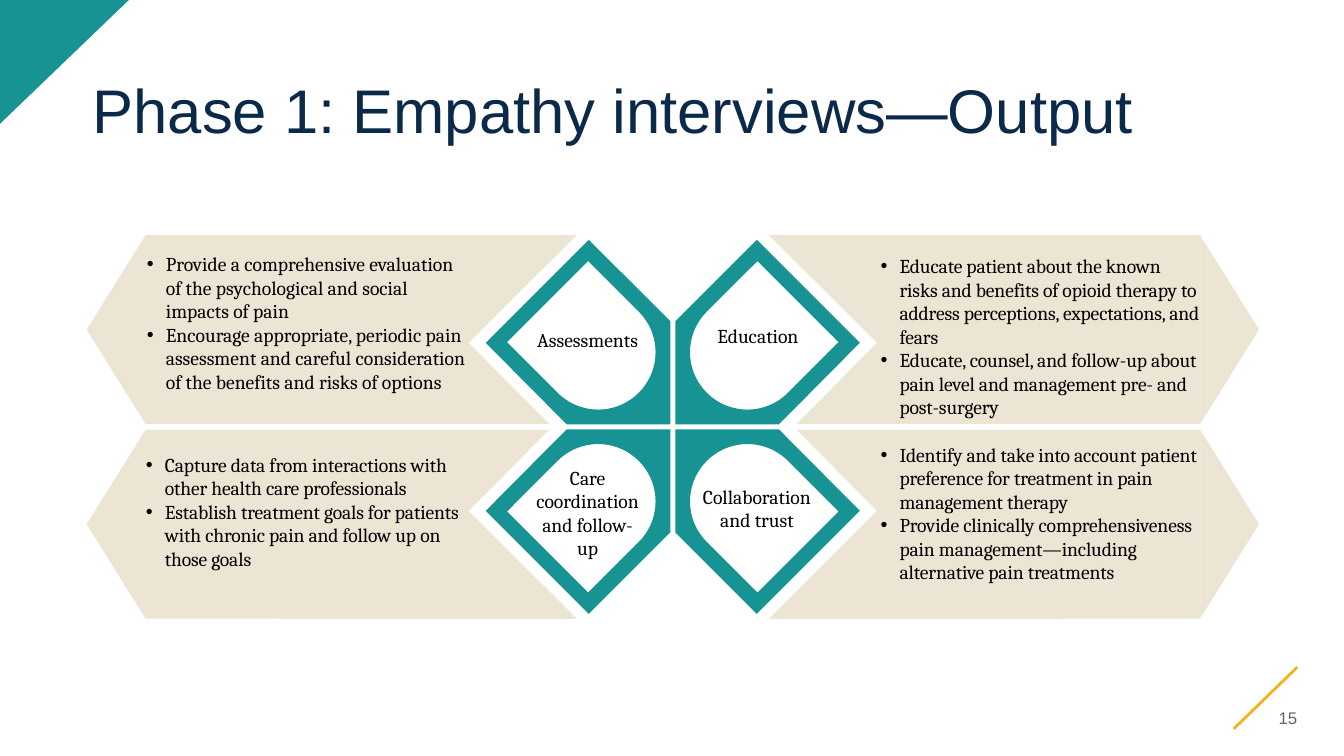
from math import cos, radians, sin

from lxml.etree import SubElement
from pptx import Presentation
from pptx.dml.color import RGBColor
from pptx.enum.shapes import MSO_CONNECTOR, MSO_SHAPE
from pptx.enum.text import MSO_ANCHOR, MSO_AUTO_SIZE, PP_ALIGN
from pptx.oxml.ns import qn
from pptx.util import Pt

COLORS = {
    "teal": "189393",
    "sand": "ECE5D3",
    "gold": "F1B51C",
    "navy": "0B2949",
    "slate": "5B6771",
    "black": "000000",
}
HUB_X, HUB_Y = 480.6, 304.9
BANNER = [(68.4, 137.2), (145.8, 60.1), (88.6, 2.2), (377, 2.2), (377, 137)]
PETAL = [(1.8, 1.8), (75.8, 1.8), (133.6, 60), (60, 133.6), (1.8, 75.4)]
HOLE_CENTER, HOLE_RADIUS = 53.3, 41
HOLE_CORNERS = [(118.4, 60.5), (60.5, 118.4)]

QUADRANTS = [
    {
        "side": (-1, -1),
        "label": ("Assessments", (373, 230.4, 93.6, 24.5), PP_ALIGN.CENTER, False),
        "findings": [
            "Provide a comprehensive evaluation of the psychological and social impacts of pain",
            "Encourage appropriate, periodic pain assessment and careful consideration "
            "of the benefits and risks of options",
        ],
        "box": (97.9, 176.4, 247, 126),
        "tracking": 0,
    },
    {
        "side": (1, -1),
        "label": ("Education", (499, 228.2, 78.5, 24.5), PP_ALIGN.RIGHT, False),
        "findings": [
            "Educate patient about the known risks and benefits of opioid therapy "
            "to address perceptions, expectations, and fears",
            "Educate, counsel, and follow-up about pain level and management "
            "pre- and post-surgery",
        ],
        "box": (622, 177.8, 242.6, 126),
        "tracking": -10,
    },
    {
        "side": (-1, 1),
        "label": ("Care\vcoordination\vand follow-\vup", (356.4, 329, 126.7, 75),
                  PP_ALIGN.CENTER, True),
        "findings": [
            "Capture data from interactions with other health care professionals",
            "Establish treatment goals for patients with chronic pain and follow up "
            "on those goals",
        ],
        "box": (97.2, 319.7, 239.8, 108.7),
        "tracking": -10,
    },
    {
        "side": (1, 1),
        "label": ("Collaboration and trust", (488.2, 342.7, 105, 41),
                  PP_ALIGN.CENTER, True),
        "findings": [
            "Identify and take into account patient preference for treatment in pain "
            "management therapy",
            "Provide clinically comprehensiveness pain management—including alternative "
            "pain treatments",
        ],
        "box": (622, 312.5, 242.6, 126),
        "tracking": -10,
    },
]


def around_hub(points, side):
    return [(Pt(HUB_X + side[0] * x), Pt(HUB_Y + side[1] * y)) for x, y in points]


def petal_hole():
    angles = [radians(135 + 5 * step) for step in range(37)]
    arc = [(HOLE_CENTER + HOLE_RADIUS * cos(a), HOLE_CENTER + HOLE_RADIUS * sin(a))
           for a in angles]
    return arc + HOLE_CORNERS


class SlideBuilder:
    def __init__(self, slide, heading_font, body_font):
        self.shapes = slide.shapes
        self.heading_font = heading_font
        self.body_font = body_font

    def paint(self, shape, color):
        shape.shadow.inherit = False
        shape.fill.solid()
        shape.fill.fore_color.rgb = RGBColor.from_string(COLORS[color])
        shape.line.fill.background()

    def preset(self, kind, box, color, rotation):
        shape = self.shapes.add_shape(kind, *map(Pt, box))
        shape.rotation = rotation
        self.paint(shape, color)

    def outline(self, contours, color):
        first, *others = contours
        builder = self.shapes.build_freeform(*first[0])
        builder.add_line_segments(first[1:])
        for contour in others:
            builder.move_to(*contour[0])
            builder.add_line_segments(contour[1:])
        self.paint(builder.convert_to_shape(), color)

    def line(self, start, end, color, width):
        stroke = self.shapes.add_connector(MSO_CONNECTOR.STRAIGHT, *map(Pt, start + end))
        stroke.line.color.rgb = RGBColor.from_string(COLORS[color])
        stroke.line.width = Pt(width)
        SubElement(stroke._element.spPr, qn("a:effectLst"))

    def style(self, paragraph, font, size, color):
        paragraph.font.name = font
        paragraph.font.size = Pt(size)
        paragraph.font.color.rgb = RGBColor.from_string(COLORS[color])

    def heading(self, text, box, size, color, align=PP_ALIGN.LEFT):
        frame = self.shapes.add_textbox(*map(Pt, box)).text_frame
        frame.word_wrap = True
        frame.vertical_anchor = MSO_ANCHOR.MIDDLE
        frame.margin_left = frame.margin_right = frame.margin_top = frame.margin_bottom = 0
        paragraph = frame.paragraphs[0]
        paragraph.text = text
        paragraph.alignment = align
        paragraph.line_spacing = 0.9
        self.style(paragraph, self.heading_font, size, color)

    def label(self, text, box, align, wrap):
        frame = self.shapes.add_textbox(*map(Pt, box)).text_frame
        frame.word_wrap = wrap
        frame.auto_size = MSO_AUTO_SIZE.SHAPE_TO_FIT_TEXT
        paragraph = frame.paragraphs[0]
        paragraph.text = text
        paragraph.alignment = align
        self.style(paragraph, self.body_font, 14, "black")

    def bullets(self, items, box, tracking):
        frame = self.shapes.add_textbox(*map(Pt, box)).text_frame
        frame.word_wrap = True
        frame.auto_size = MSO_AUTO_SIZE.SHAPE_TO_FIT_TEXT
        for index, item in enumerate(items):
            paragraph = frame.add_paragraph() if index else frame.paragraphs[0]
            properties = paragraph._p.get_or_add_pPr()
            properties.set("marL", str(Pt(13.5)))
            properties.set("indent", str(-Pt(13.5)))
            SubElement(properties, qn("a:buFont")).set("typeface", "Arial")
            SubElement(properties, qn("a:buChar")).set("char", "•")
            run = paragraph.add_run()
            run.text = item
            run._r.get_or_add_rPr().set("spc", str(tracking))
            self.style(paragraph, self.body_font, 14, "black")


def main():
    deck = Presentation()
    deck.slide_width, deck.slide_height = Pt(960), Pt(540)
    page = SlideBuilder(deck.slides.add_slide(deck.slide_layouts[6]), "Arial", "Cambria")

    page.preset(MSO_SHAPE.RIGHT_TRIANGLE, (1.8, -1.8, 88.4, 92), "teal", 90)
    page.line((881.3, 520.6), (926.6, 476.6), "gold", 2)
    page.heading("Phase 1: Empathy interviews—Output", (66.2, 29.5, 828, 103), 44, "navy")

    tip_width, tip_height = 134, 41.8
    for quadrant in QUADRANTS:
        side = quadrant["side"]
        page.outline([around_hub(BANNER, side)], "sand")
        tip_box = (HUB_X + side[0] * 397.8 - tip_width / 2,
                   HUB_Y + side[1] * 69.5 - tip_height / 2, tip_width, tip_height)
        page.preset(MSO_SHAPE.ISOSCELES_TRIANGLE, tip_box, "sand", 90 * side[0] % 360)
        page.outline([around_hub(PETAL, side), around_hub(petal_hole(), side)], "teal")
        page.label(*quadrant["label"])
        page.bullets(quadrant["findings"], quadrant["box"], quadrant["tracking"])

    page.heading("15", (885.6, 486.7, 41, 53.3), 12, "slate", PP_ALIGN.RIGHT)
    deck.save("out.pptx")


if __name__ == "__main__":
    main()
